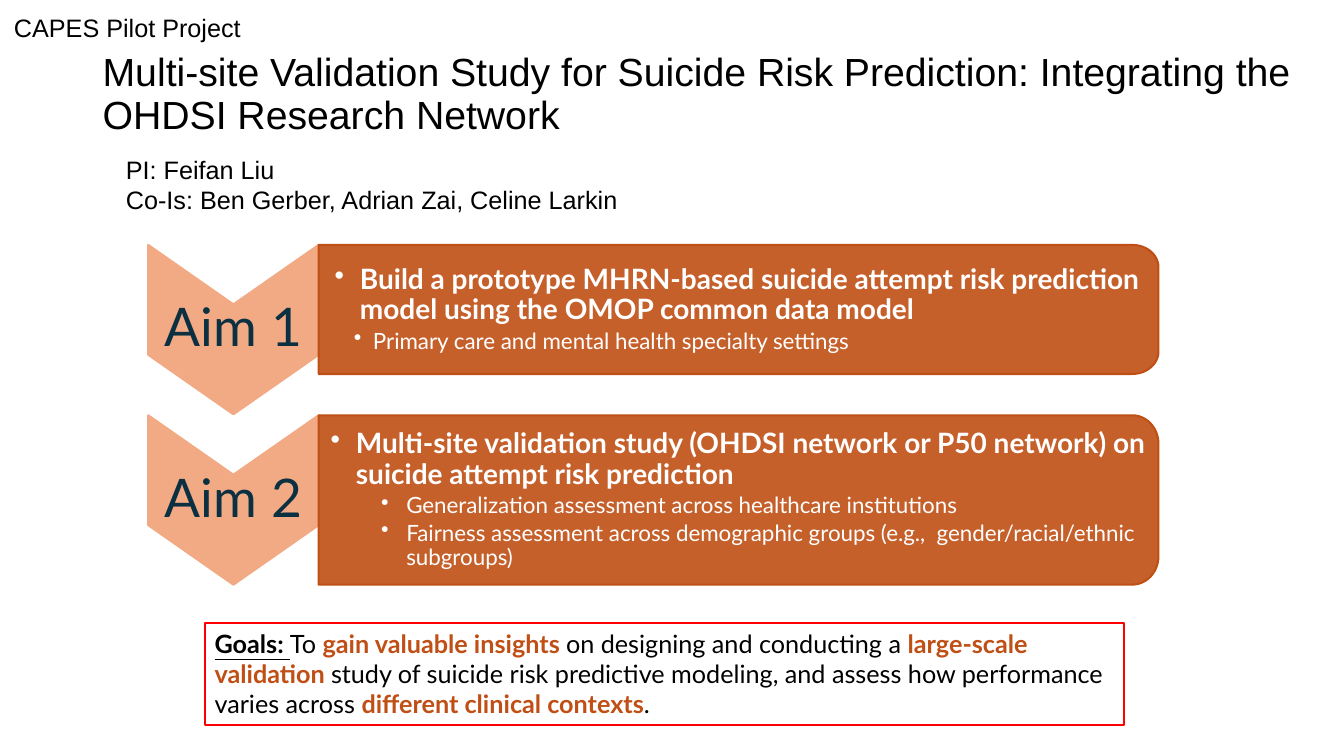
from math import cos, pi, sin

from lxml.etree import SubElement
from pptx import Presentation
from pptx.dml.color import RGBColor
from pptx.enum.shapes import MSO_SHAPE
from pptx.enum.text import MSO_ANCHOR, PP_ALIGN
from pptx.oxml.ns import qn
from pptx.util import Inches, Pt

BLACK = RGBColor(0x00, 0x00, 0x00)
WHITE = RGBColor(0xFF, 0xFF, 0xFF)
RED = RGBColor(0xFF, 0x00, 0x00)
PEACH = RGBColor(0xF2, 0xAA, 0x84)
RUST = RGBColor(0xC0, 0x4F, 0x15)
NAVY = RGBColor(0x0B, 0x30, 0x41)

AIM_LEFT, AIM_TOP, AIM_PITCH = 1.47, 2.43, 1.69
CHEVRON_W, CHEVRON_H, CHEVRON_DIP = 1.69, 1.68, 0.59
PANEL_W, CORNER_W = 8.33, 0.26

# Each aim: label, panel height, corner height, left inset,
# (margin, hang) of the sub-bullets, heading, sub-bullets
AIMS = [
    ("Aim 1", 1.28, 0.22, 0.16, (0.38, 0.19),
     "Build a prototype MHRN-based suicide attempt risk prediction model "
     "using the OMOP common data model",
     ["Primary care and mental health specialty settings"]),
    ("Aim 2", 1.68, 0.28, 0.12, (0.75, 0.25),
     "Multi-site validation study (OHDSI network or P50 network) on suicide "
     "attempt risk prediction",
     ["Generalization assessment across healthcare institutions",
      "Fairness assessment across demographic groups (e.g.,  "
      "gender/racial/ethnic subgroups)"]),
]

# Text and whether it is highlighted
GOALS = [
    ("To ", False),
    ("gain valuable insights ", True),
    ("on designing and conducting a ", False),
    ("large-scale validation ", True),
    ("study of suicide risk predictive modeling, and assess how performance "
     "varies across ", False),
    ("different clinical contexts", True),
    (".", False),
]


def set_font(font, name, size, color, bold=False):
    font.name, font.size, font.bold = name, Pt(size), bold
    font.color.rgb = color


def add_text(slide, box, lines, size, anchor=MSO_ANCHOR.TOP, spacing=None):
    tf = slide.shapes.add_textbox(*map(Inches, box)).text_frame
    tf.word_wrap = True
    tf.vertical_anchor = anchor
    tf.text = "\n".join(lines)
    for p in tf.paragraphs:
        p.line_spacing = spacing
        set_font(p.font, "Arial", size, BLACK)


def add_outline(slide, points, color, insets):
    """Draw a closed polygon and return it, ready for centred-height text."""
    start, *rest = [(Inches(x), Inches(y)) for x, y in points]
    builder = slide.shapes.build_freeform(*start)
    builder.add_line_segments(rest, close=True)
    sp = builder.convert_to_shape()
    sp.shadow.inherit = False
    sp.fill.solid()
    sp.fill.fore_color.rgb = color
    sp.line.color.rgb = color
    sp.line.width = Pt(1.5)
    tf = sp.text_frame
    tf.word_wrap = True
    tf.vertical_anchor = MSO_ANCHOR.MIDDLE
    tf.margin_left, tf.margin_top, tf.margin_right, tf.margin_bottom = map(
        Inches, insets)
    return sp


def set_opacity(sp, percent):
    color = sp.fill._xPr.find(qn("a:solidFill"))[0]
    SubElement(color, qn("a:alpha")).set("val", str(percent * 1000))


def add_chevron(slide, top, label):
    left, right = AIM_LEFT, AIM_LEFT + CHEVRON_W
    middle, bottom = (left + right) / 2, top + CHEVRON_H
    points = [(right, top), (right, bottom - CHEVRON_DIP), (middle, bottom),
              (left, bottom - CHEVRON_DIP), (left, top),
              (middle, top + CHEVRON_DIP)]
    sp = add_outline(slide, points, PEACH, (0.03, 0, 0.03, 0))
    p = sp.text_frame.paragraphs[0]
    p.text = label
    p.alignment = PP_ALIGN.CENTER
    p.line_spacing = 0.9
    set_font(p.font, "Lato", 38, NAVY)


def add_bullet(p, text, size, margin, hang, bold=False):
    p.text = text
    p.alignment = PP_ALIGN.LEFT
    p.line_spacing = 0.9
    p.space_after = Pt(size * 0.15)
    set_font(p.font, "Lato", size, WHITE, bold)
    pPr = p._p.get_or_add_pPr()
    pPr.set("marL", str(Inches(margin)))
    pPr.set("indent", str(-Inches(hang)))
    bullet = pPr.makeelement(qn("a:buChar"), {"char": "•"})
    pPr.insert_element_before(bullet, "a:tabLst", "a:defRPr", "a:extLst")


def add_panel(slide, top, height, corner_h, inset, sub_indent, heading, subs):
    """Add a panel with rounded right corners and its bullets."""
    left = AIM_LEFT + CHEVRON_W
    right, bottom = left + PANEL_W, top + height
    arc = [(CORNER_W * (1 - sin(i * pi / 24)), corner_h * (1 - cos(i * pi / 24)))
           for i in range(13)]
    points = [(left, bottom), (left, top)]
    points += [(right - dx, top + dy) for dx, dy in arc]
    points += [(right - dx, bottom - dy) for dx, dy in reversed(arc)]
    sp = add_outline(slide, points, RUST, (inset, 0.08, 0.08, 0.08))
    set_opacity(sp, 90)
    tf = sp.text_frame
    add_bullet(tf.paragraphs[0], heading, 20, 0.25, 0.25, bold=True)
    for sub in subs:
        add_bullet(tf.add_paragraph(), sub, 16, *sub_indent)


def add_goals(slide):
    sp = slide.shapes.add_shape(MSO_SHAPE.RECTANGLE, Inches(2.03), Inches(6.18),
                                Inches(9.12), Inches(1.01))
    sp.shadow.inherit = False
    sp.fill.background()
    sp.line.color.rgb = RED
    sp.line.width = Pt(1.5)
    tf = sp.text_frame
    tf.word_wrap = True
    tf.vertical_anchor = MSO_ANCHOR.TOP
    p = tf.paragraphs[0]
    p.alignment = PP_ALIGN.LEFT
    r = p.add_run()
    r.text = "Goals: "
    set_font(r.font, "Lato", 18, BLACK, bold=True)
    r.font.underline = True
    for text, highlighted in GOALS:
        r = p.add_run()
        r.text = text
        set_font(r.font, "Lato", 18, RUST if highlighted else BLACK, highlighted)


def main():
    prs = Presentation()
    prs.slide_width, prs.slide_height = Inches(13.33), Inches(7.5)
    slide = prs.slides.add_slide(prs.slide_layouts[6])
    add_text(slide, (0.92, 0.4, 12.17, 1.09),
             ["Multi-site Validation Study for Suicide Risk Prediction: "
              "Integrating the OHDSI Research Network"],
             28, MSO_ANCHOR.MIDDLE, 0.9)
    add_text(slide, (0.04, 0.07, 6.67, 0.4), ["CAPES Pilot Project"], 18)
    add_text(slide, (1.15, 1.48, 10.02, 0.71),
             ["PI: Feifan Liu", "Co-Is: Ben Gerber, Adrian Zai, Celine Larkin"],
             18)
    for i, (label, *panel) in enumerate(AIMS):
        top = AIM_TOP + i * AIM_PITCH
        add_chevron(slide, top, label)
        add_panel(slide, top, *panel)
    add_goals(slide)
    prs.save("out.pptx")


if __name__ == "__main__":
    main()
